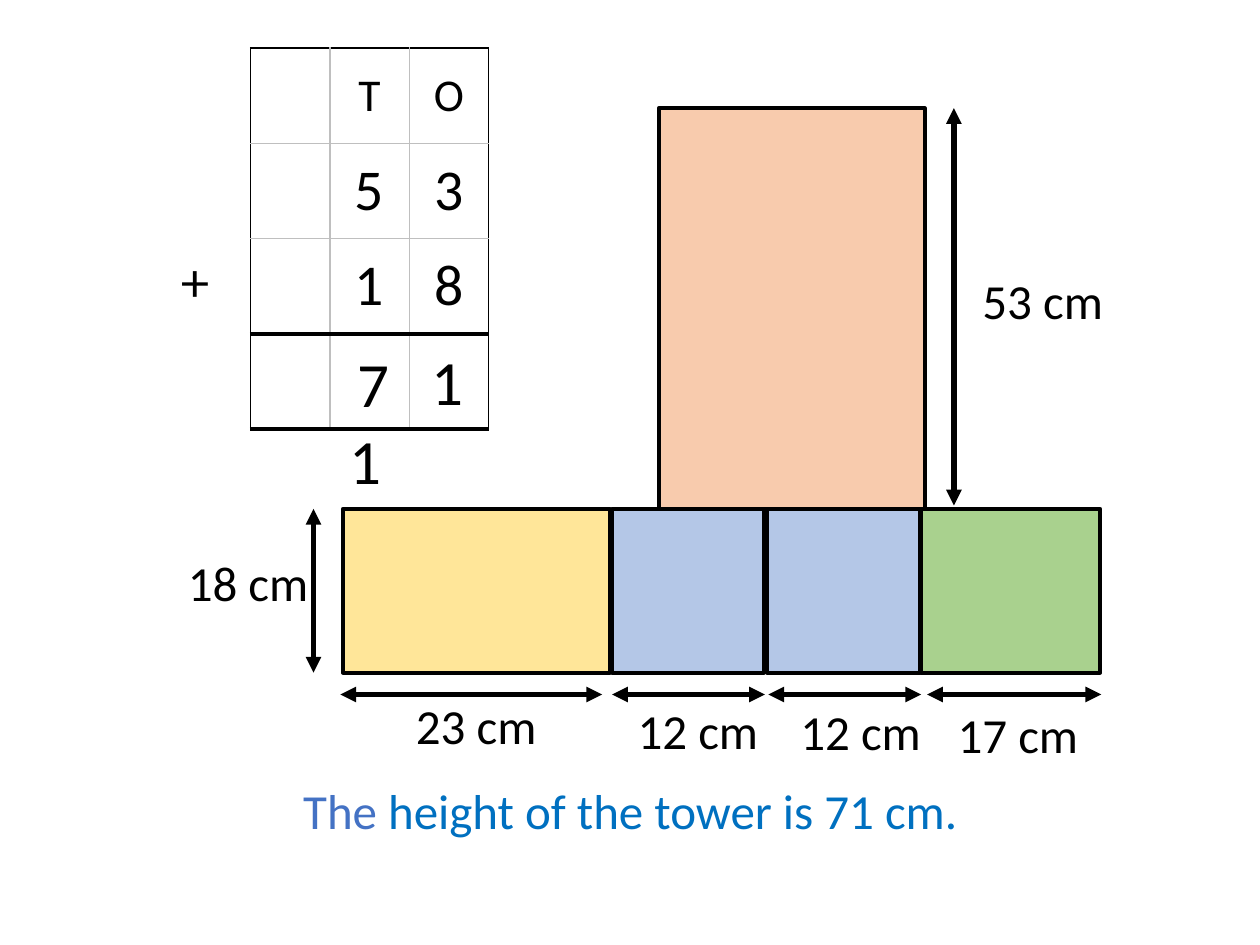
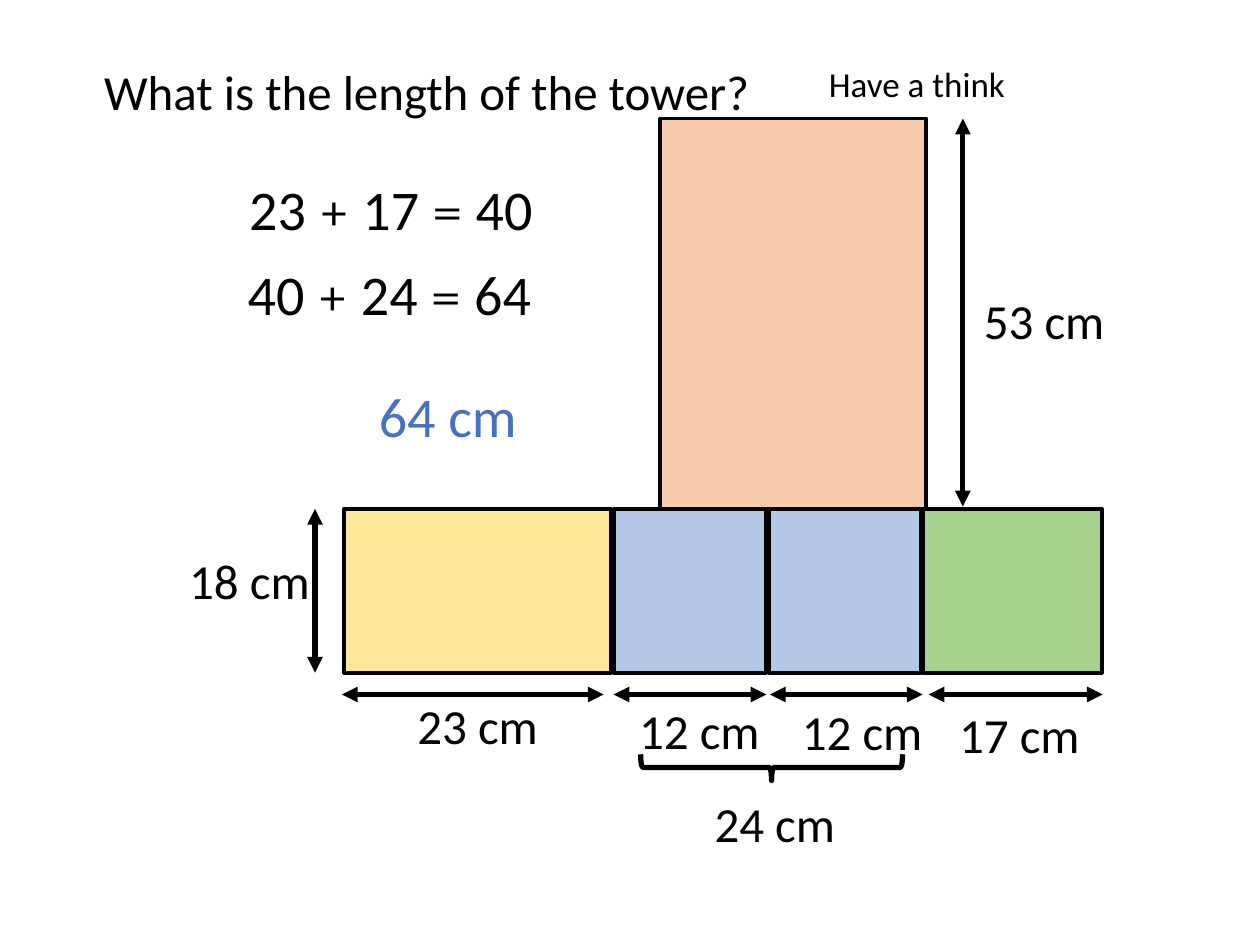
from dataclasses import dataclass

from lxml import etree
from pptx import Presentation
from pptx import util as u
from pptx.dml.color import RGBColor
from pptx.enum import shapes, text
from pptx.oxml.ns import qn

BLACK = RGBColor(0x00, 0x00, 0x00)
WHITE = RGBColor(0xFF, 0xFF, 0xFF)
GREY = RGBColor(0xBF, 0xBF, 0xBF)
BLUE = RGBColor(0x44, 0x72, 0xC4)
ANSWER_BLUE = RGBColor(0x00, 0x70, 0xC0)
PEACH = RGBColor(0xF8, 0xCB, 0xAD)
PALE_BLUE = RGBColor(0xB4, 0xC7, 0xE7)
GREEN = RGBColor(0xA9, 0xD1, 0x8E)
YELLOW = RGBColor(0xFF, 0xE6, 0x99)

BODY_FONT = "Calibri"
MATHS_FONT = "Cambria"
LABEL_WIDTH = 3.76
LABEL_SIZE = 28

# Tower geometry, in centimetres
BASE_TOP = 10.26
BASE_HEIGHT = 3.3
TOP_BLOCK_LEFT = 13.28
TOP_BLOCK_WIDTH = 5.36
WIDTH_ARROW_Y = 14.0


@dataclass(frozen=True)
class Span:
    words: str
    color: RGBColor = BLACK
    font: str = BODY_FONT


@dataclass(frozen=True)
class Label:
    left: float
    top: float
    width: float
    spans: tuple[Span, ...]
    size: int = LABEL_SIZE
    centred: bool = True
    wrap: bool = True


@dataclass(frozen=True)
class Block:
    left: float
    width: float
    color: RGBColor


@dataclass(frozen=True)
class Measure:
    start: float
    end: float
    label_left: float
    label_top: float
    words: str


@dataclass(frozen=True)
class Tower:
    """What differs between the two drawings of the tower."""
    shift: float
    top: float
    height_arrow_x: float
    height_arrow_end: float
    height_label_top: float
    base_label_top: float


BASE_BLOCKS = (
    Block(15.47, 3.07, PALE_BLUE),
    Block(12.34, 3.07, PALE_BLUE),
    Block(18.57, 3.61, GREEN),
    Block(6.91, 5.38, YELLOW),
)
WIDTHS = (
    Measure(6.86, 12.14, 7.72, 13.89, "23 cm"),
    Measure(12.34, 15.42, 12.19, 14.0, "12 cm"),
    Measure(15.49, 18.57, 15.47, 14.02, "12 cm"),
    Measure(18.69, 22.2, 18.64, 14.07, "17 cm"),
)


def add_label(page, label: Label) -> None:
    height = label.size * 0.0425 + 0.26
    box = page.shapes.add_textbox(u.Cm(label.left), u.Cm(label.top),
                                  u.Cm(label.width), u.Cm(height))
    frame = box.text_frame
    frame.word_wrap = label.wrap
    frame.auto_size = text.MSO_AUTO_SIZE.SHAPE_TO_FIT_TEXT
    add_spans(frame.paragraphs[0], label.spans, label.size, label.centred)


def add_spans(para, spans: tuple[Span, ...], size: int, centred: bool) -> None:
    para.alignment = text.PP_ALIGN.CENTER if centred else text.PP_ALIGN.LEFT
    for span in spans:
        run = para.add_run()
        run.text = span.words
        run.font.size = u.Pt(size)
        run.font.name = span.font
        run.font.color.rgb = span.color


def add_block(page, block: Block, top: float, height: float) -> None:
    shape = page.shapes.add_shape(shapes.MSO_SHAPE.RECTANGLE, u.Cm(block.left),
                                  u.Cm(top), u.Cm(block.width), u.Cm(height))
    shape.shadow.inherit = False
    shape.fill.solid()
    shape.fill.fore_color.rgb = block.color
    shape.line.color.rgb = BLACK
    shape.line.width = u.Pt(2.25)


def add_arrow(page, x1: float, y1: float, x2: float, y2: float) -> None:
    """Draw a line with a triangle at both ends."""
    arrow = page.shapes.add_connector(shapes.MSO_CONNECTOR.STRAIGHT,
                                      u.Cm(x1), u.Cm(y1), u.Cm(x2), u.Cm(y2))
    arrow.line.color.rgb = BLACK
    arrow.line.width = u.Pt(3)
    properties = arrow._element.spPr
    outline = properties.find(qn("a:ln"))
    for end in ("a:headEnd", "a:tailEnd"):
        etree.SubElement(outline, qn(end), type="triangle")
    etree.SubElement(properties, qn("a:effectLst"))


def add_tower(page, tower: Tower) -> None:
    shift = tower.shift

    # Upper block with its height
    add_label(page, Label(18.34 + shift, tower.height_label_top, TOP_BLOCK_WIDTH,
                          (Span("53 cm"),)))
    add_block(page, Block(TOP_BLOCK_LEFT + shift, TOP_BLOCK_WIDTH, PEACH),
              tower.top, BASE_TOP - tower.top)
    add_arrow(page, tower.height_arrow_x, tower.top,
              tower.height_arrow_x, tower.height_arrow_end)

    # Base blocks with their height
    for block in BASE_BLOCKS:
        add_block(page, Block(block.left + shift, block.width, block.color),
                  BASE_TOP, BASE_HEIGHT)
    add_arrow(page, 6.32 + shift, BASE_TOP, 6.32 + shift, BASE_TOP + BASE_HEIGHT)
    add_label(page, Label(3.12 + shift, tower.base_label_top, LABEL_WIDTH,
                          (Span("18 cm"),)))

    # Widths under the base
    for measure in WIDTHS:
        add_arrow(page, measure.start + shift, WIDTH_ARROW_Y,
                  measure.end + shift, WIDTH_ARROW_Y)
        add_label(page, Label(measure.label_left + shift, measure.label_top,
                              LABEL_WIDTH, (Span(measure.words),)))


def set_border(cell, order: int, side: str, color: RGBColor, width: float) -> None:
    properties = cell._tc.get_or_add_tcPr()
    border = etree.Element(qn(f"a:ln{side}"), w=str(u.Pt(width)))
    fill = etree.SubElement(border, qn("a:solidFill"))
    etree.SubElement(fill, qn("a:srgbClr"), val=str(color))
    properties.insert(order, border)


def add_column_sum(page) -> None:
    rows = (("", "T", "O"), ("", "5", "3"), ("", "1", "8"), ("", "", ""))
    column_width, row_height = u.Cm(1.6), u.Cm(1.92)
    grid = page.shapes.add_table(4, 3, u.Cm(5.05), u.Cm(0.97),
                                 column_width * 3, row_height * 4).table
    grid.first_row = grid.horz_banding = False
    for column in grid.columns:
        column.width = column_width

    thin_black, thin_grey, thick = (BLACK, 1), (GREY, 1), (BLACK, 3)
    for r, words in enumerate(rows):
        grid.rows[r].height = row_height
        for c, word in enumerate(words):
            cell = grid.cell(r, c)
            cell.fill.solid()
            cell.fill.fore_color.rgb = WHITE
            cell.vertical_anchor = text.MSO_ANCHOR.MIDDLE
            if r == 0:
                cell.margin_left = cell.margin_right = 0
                cell.margin_top = cell.margin_bottom = 0
            if word:
                add_spans(cell.text_frame.paragraphs[0], (Span(word),),
                          26 if r == 0 else 33, True)
            # Black frame, grey grid, thick rules around the answer row
            borders = {
                "L": thin_black if c == 0 else thin_grey,
                "R": thin_black if c == 2 else thin_grey,
                "T": thin_black if r == 0 else thick if r == 3 else thin_grey,
                "B": thick if r >= 2 else thin_grey,
            }
            for order, (side, (color, width)) in enumerate(borders.items()):
                set_border(cell, order, side, color, width)


def add_brace(page) -> None:
    brace = page.shapes.add_shape(shapes.MSO_SHAPE.LEFT_BRACE, u.Cm(15.29),
                                  u.Cm(12.83), u.Cm(0.53), u.Cm(5.28))
    brace.rotation = 270
    brace.shadow.inherit = False
    brace.fill.background()
    brace.line.color.rgb = BLACK
    brace.line.width = u.Pt(3)


def equation(first: str, second: str, total: str) -> tuple[Span, ...]:
    return (Span(f"{first} "), Span("+", font=MATHS_FONT), Span(f" {second} "),
            Span("=", font=MATHS_FONT), Span(f" {total}"))


def build_height_page(page) -> None:
    add_column_sum(page)
    add_label(page, Label(3.33, 4.7, 1.47, (Span("+", font=MATHS_FONT),), 36,
                          centred=False, wrap=False))
    # Answer digits and the carried ten
    for digit, left, top in (("1", 7.54, 6.78), ("1", 5.89, 8.38), ("7", 6.05, 6.83)):
        add_label(page, Label(left, top, 2.95, (Span(digit),), 36))
    add_label(page, Label(5.44, 15.6, 14.53, (
        Span("The", BLUE), Span(" height of the tower is 71 cm.", ANSWER_BLUE))))
    add_tower(page, Tower(0, 2.18, 19.23, 10.19, 5.33, 11.02))


def build_length_page(page) -> None:
    add_label(page, Label(16.46, 1.14, 5.56, (Span("Have a think"),), 20, centred=False))
    add_tower(page, Tower(0.03, 2.39, 19.41, 10.21, 5.74, 10.97))
    add_label(page, Label(1.85, 1.12, 15.09,
                          (Span("What is the length of the tower?"),), centred=False))
    # The two equal blocks together
    add_brace(page)
    add_label(page, Label(13.74, 15.88, LABEL_WIDTH, (Span("24 cm"),)))
    # Working and answer
    add_label(page, Label(4.22, 3.4, 7.32, equation("23", "17", "40"), 32))
    add_label(page, Label(6.35, 7.57, 5.36, (Span("64 cm", BLUE),), 32))
    add_label(page, Label(4.19, 5.11, 7.32, equation("40", "24", "64"), 32))


def main() -> None:
    deck = Presentation()
    deck.slide_width, deck.slide_height = u.Cm(25.4), u.Cm(19.05)
    blank = deck.slide_layouts[6]
    for build_page in (build_height_page, build_length_page):
        build_page(deck.slides.add_slide(blank))
    deck.save("out.pptx")


if __name__ == "__main__":
    main()
